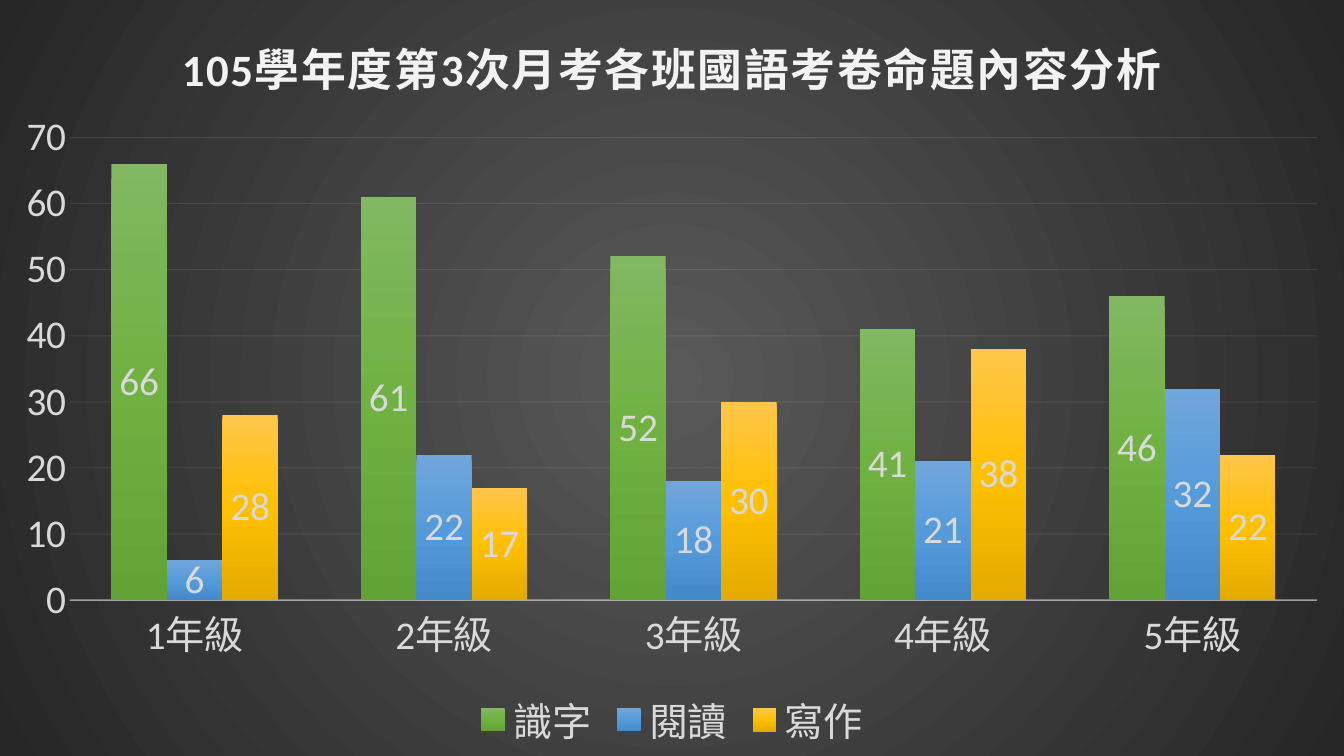
import pptx
import pptx.util
import pptx.oxml
import pptx.oxml.ns
import pptx.chart.data
import pptx.dml.color
import pptx.enum.chart as enums
from dataclasses import dataclass

NS = pptx.oxml.ns.nsdecls("a", "c")
qn = pptx.oxml.ns.qn


@dataclass(frozen=True)
class Theme:
    font: str = "Calibri"
    title_size: float = 32
    text_size: float = 28
    title: str = "F2F2F2"
    text: str = "D9D9D9"
    line: str = "F2F2F2"
    background: tuple = ("595959", "262626")


THEME = Theme()
TITLE = "105學年度第3次月考各班國語考卷命題內容分析"
GRADES = [f"{n}年級" for n in range(1, 6)]
# Skill name, values per grade, gradient from top to bottom
SKILLS = [
    ("識字", (66, 61, 52, 41, 46), ("81B861", "6FB242", "62A336")),
    ("閱讀", (6, 22, 18, 21, 32), ("71A6DB", "559BDB", "448ACA")),
    ("寫作", (28, 17, 30, 38, 22), ("FFC64B", "FFC000", "E3AB00")),
]
LINEAR = '<a:lin ang="5400000" scaled="0"/>'
RADIAL = ('<a:path path="circle">'
          '<a:fillToRect l="50000" t="50000" r="50000" b="50000"/></a:path>')


def rgb(colour):
    return pptx.dml.color.RGBColor.from_string(colour)


def style_font(font, size, colour, bold=False):
    font.name, font.size, font.bold = THEME.font, pptx.util.Pt(size), bold
    font.color.rgb = rgb(colour)


def gradient(colours, direction):
    """Gradient fill with evenly spaced stops."""
    step = 100000 // (len(colours) - 1)
    stops = "".join(f'<a:gs pos="{i * step}"><a:srgbClr val="{c}"/></a:gs>'
                    for i, c in enumerate(colours))
    return pptx.oxml.parse_xml(
        f'<a:gradFill {NS} rotWithShape="1"><a:gsLst>{stops}</a:gsLst>'
        f'{direction}</a:gradFill>')


def style_line(line, width, opacity):
    line.width = pptx.util.Pt(width)
    line.color.rgb = rgb(THEME.line)
    for clr in line._get_or_add_ln().iter(qn("a:srgbClr")):
        clr.append(pptx.oxml.parse_xml(
            f'<a:alpha {NS} val="{opacity * 1000}"/>'))


def place_plot(chart, **shares):
    """Inner plot area, as shares of the chart's size."""
    plot_area = chart._chartSpace.find(qn("c:chart")).find(qn("c:plotArea"))
    for old in plot_area.findall(qn("c:layout")):
        plot_area.remove(old)
    modes = "".join(f'<c:{k}Mode val="edge"/>' for k in "xy")
    values = "".join(f'<c:{k} val="{v}"/>' for k, v in shares.items())
    plot_area.insert(0, pptx.oxml.parse_xml(
        f'<c:layout {NS}><c:manualLayout><c:layoutTarget val="inner"/>'
        f'{modes}{values}</c:manualLayout></c:layout>'))


def add_title(chart):
    """Title on one line, centred at the top by the chart itself."""
    tf = chart.chart_title.text_frame
    r = tf.paragraphs[0].add_run()
    r.text = TITLE
    style_font(r.font, THEME.title_size, THEME.title, bold=True)
    r.font._element.set("spc", "100")
    chart.chart_title.include_in_layout = False


def style_axes(chart):
    for axis in (chart.category_axis, chart.value_axis):
        axis.major_tick_mark = axis.minor_tick_mark = enums.XL_TICK_MARK.NONE
        style_font(axis.tick_labels.font, THEME.text_size, THEME.text)
    style_line(chart.category_axis.format.line, 1, 54)
    values = chart.value_axis
    values.minimum_scale, values.maximum_scale, values.major_unit = 0, 70, 10
    values.format.line.fill.background()
    style_line(values.major_gridlines.format.line, 0.75, 10)


def style_series(series, colours):
    series.invert_if_negative = False
    series._element.get_or_add_spPr().insert(0, gradient(colours, LINEAR))
    labels = series.data_labels
    labels.show_value = True
    labels.position = enums.XL_LABEL_POSITION.CENTER
    style_font(labels.font, THEME.text_size, THEME.text)


def add_legend(chart):
    chart.has_legend = True
    chart.legend.position = enums.XL_LEGEND_POSITION.BOTTOM
    chart.legend.include_in_layout = False
    style_font(chart.legend.font, THEME.text_size, THEME.text)


def add_background(chart):
    sp = pptx.oxml.parse_xml(f"<c:spPr {NS}><a:ln><a:noFill/></a:ln></c:spPr>")
    sp.insert(0, gradient(THEME.background, RADIAL))
    chart._chartSpace.find(qn("c:chart")).addnext(sp)


def add_column_chart(s, width, height):
    data = pptx.chart.data.CategoryChartData()
    data.categories = GRADES
    for name, values, _ in SKILLS:
        data.add_series(name, values)
    chart = s.shapes.add_chart(enums.XL_CHART_TYPE.COLUMN_CLUSTERED,
                               0, 0, width, height, data).chart
    style_font(chart.font, THEME.text_size, THEME.text)
    plot = chart.plots[0]
    plot.gap_width, plot.overlap, plot.vary_by_categories = 150, 0, False
    for series, (_, _, colours) in zip(plot.series, SKILLS):
        style_series(series, colours)
    style_axes(chart)
    add_title(chart)
    add_legend(chart)
    add_background(chart)
    place_plot(chart, x=0.052, y=0.182, w=0.928, h=0.612)


def main():
    prs = pptx.Presentation()
    prs.slide_width = pptx.util.Inches(13.33)
    prs.slide_height = pptx.util.Inches(7.5)
    s = prs.slides.add_slide(prs.slide_layouts[6])
    # The chart fills the slide
    add_column_chart(s, prs.slide_width, prs.slide_height)
    prs.save("out.pptx")


if __name__ == "__main__":
    main()
